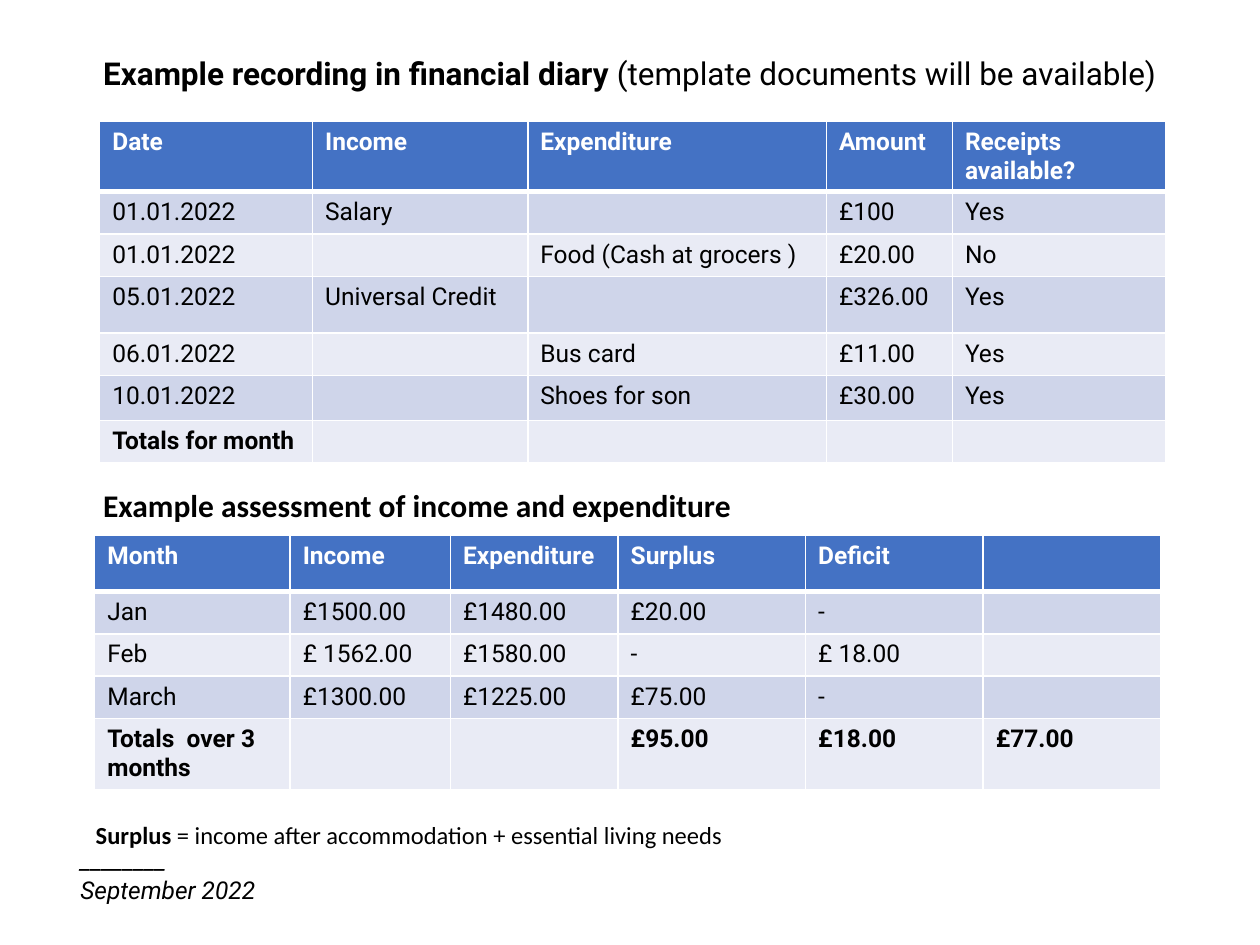
from typing import NamedTuple

from lxml.etree import SubElement
from pptx import Presentation
from pptx.dml.color import RGBColor
from pptx.oxml.ns import qn
from pptx.util import Cm, Pt

WHITE, BLACK, BLUE = "FFFFFF", "000000", "4472C4"
BANDS = ("CFD5EA", "E9EBF5")


class Grid(NamedTuple):
    left: float
    top: float
    cols: list[float]
    rows: list[float]
    cells: list[list[str]]
    bold: range  # columns set in bold in the totals row


class Note(NamedTuple):
    left: float
    top: float
    width: float
    height: float
    lines: list[list[tuple[str, bool]]]  # each line is (text, bold) runs
    size: int = 14
    font: str = "Roboto"
    slant: bool = False


def paint(item, color: str) -> None:
    """Colour a fill or a font."""
    if hasattr(item, "solid"):
        item.solid()
        item.fore_color.rgb = RGBColor.from_string(color)
    else:
        item.color.rgb = RGBColor.from_string(color)


def write(para, text: str, *, size: int = 14, font: str = "Roboto",
          color: str = BLACK, bold: bool = False, slant: bool = False) -> None:
    """Add a run; an empty text only sets the height of the line."""
    if not text:
        SubElement(para._p, qn("a:endParaRPr"), sz=str(size * 100))
        return
    run = para.add_run()
    run.text = text
    run.font.size, run.font.name = Pt(size), font
    run.font.bold, run.font.italic = bold, slant
    paint(run.font, color)


def edge(cell, base: float) -> None:
    """Draw white borders, with the given width at the bottom."""
    props = cell._tc.get_or_add_tcPr()
    for side, width in zip("LRTB", (1, 1, 1, base)):
        line = SubElement(props, qn(f"a:ln{side}"), w=str(Pt(width)))
        fill = SubElement(line, qn("a:solidFill"))
        SubElement(fill, qn("a:srgbClr"), val=WHITE)


def draw_grid(slide, grid: Grid) -> None:
    table = slide.shapes.add_table(
        len(grid.rows), len(grid.cols), Cm(grid.left), Cm(grid.top),
        Cm(sum(grid.cols)), Cm(sum(grid.rows))).table
    for col, width in zip(table.columns, grid.cols):
        col.width = Cm(width)
    last = len(grid.rows) - 1
    for y, (row, height) in enumerate(zip(table.rows, grid.rows)):
        row.height = Cm(height)
        head = y == 0
        for x, text in enumerate(grid.cells[y]):
            cell = table.cell(y, x)
            edge(cell, 3 if head else 1)
            paint(cell.fill, BLUE if head else BANDS[(y - 1) % 2])
            write(cell.text_frame.paragraphs[0], text,
                  color=WHITE if head else BLACK,
                  bold=head or (y == last and x in grid.bold))


def draw_note(slide, note: Note) -> None:
    box = slide.shapes.add_textbox(Cm(note.left), Cm(note.top),
                                   Cm(note.width), Cm(note.height))
    frame = box.text_frame
    frame.word_wrap = True
    for i, line in enumerate(note.lines):
        para = frame.add_paragraph() if i else frame.paragraphs[0]
        for text, bold in line:
            write(para, text, size=note.size, font=note.font,
                  bold=bold, slant=note.slant)


DIARY = Grid(
    2.01, 2.44, [4.29, 4.34, 6.02, 2.54, 4.29],
    [1.42, 0.84, 0.84, 1.14, 0.84, 0.91, 0.84],
    [["Date", "Income", "Expenditure", "Amount", "Receipts available?"],
     ["01.01.2022", "Salary", "", "£100", "Yes"],
     ["01.01.2022", "", "Food (Cash at grocers )", "£20.00", "No"],
     ["05.01.2022", "Universal Credit", "", "£326.00", "Yes"],
     ["06.01.2022", "", "Bus card", "£11.00", "Yes"],
     ["10.01.2022", "", "Shoes for son", "£30.00", "Yes"],
     ["Totals for month", "", "", "", ""]],
    range(1))

BUDGET = Grid(
    1.91, 10.8, [3.94, 3.23, 3.38, 3.78, 3.58, 3.58],
    [1.12, 0.84, 0.84, 0.84, 1.42],
    [["Month", "Income", "Expenditure", "Surplus", "Deficit", ""],
     ["Jan", "£1500.00", "£1480.00", "£20.00", "-", ""],
     ["Feb", "£ 1562.00", "£1580.00", "-", "£ 18.00", ""],
     ["March", "£1300.00", "£1225.00", "£75.00", "-", ""],
     ["Totals  over 3 months", "", "", "£95.00", "£18.00", "£77.00"]],
    range(6))

NOTES = [
    Note(1.83, 9.68, 21.2, 1.02,
         [[("Example assessment of income and expenditure", True)]],
         size=18, font="Calibri"),
    Note(1.83, 0.97, 22.83, 1.02,
         [[("Example recording in financial diary ", True),
           ("(template documents will be available)", False)]], size=18),
    Note(1.37, 16.92, 18.4, 1.45,
         [[("________", False)], [("September 2022", False)]], slant=True),
    Note(1.68, 16.41, 18.1, 0.86,
         [[("Surplus ", True),
           ("= income after accommodation + essential living needs", False)]],
         font="Calibri"),
]


def main() -> None:
    deck = Presentation()
    deck.slide_width, deck.slide_height = Cm(25.4), Cm(19.05)
    slide = deck.slides.add_slide(deck.slide_layouts[6])
    paint(slide.background.fill, WHITE)
    # Tables
    for grid in (DIARY, BUDGET):
        draw_grid(slide, grid)
    # Headings and footnotes
    for note in NOTES:
        draw_note(slide, note)
    deck.save("out.pptx")


if __name__ == "__main__":
    main()
